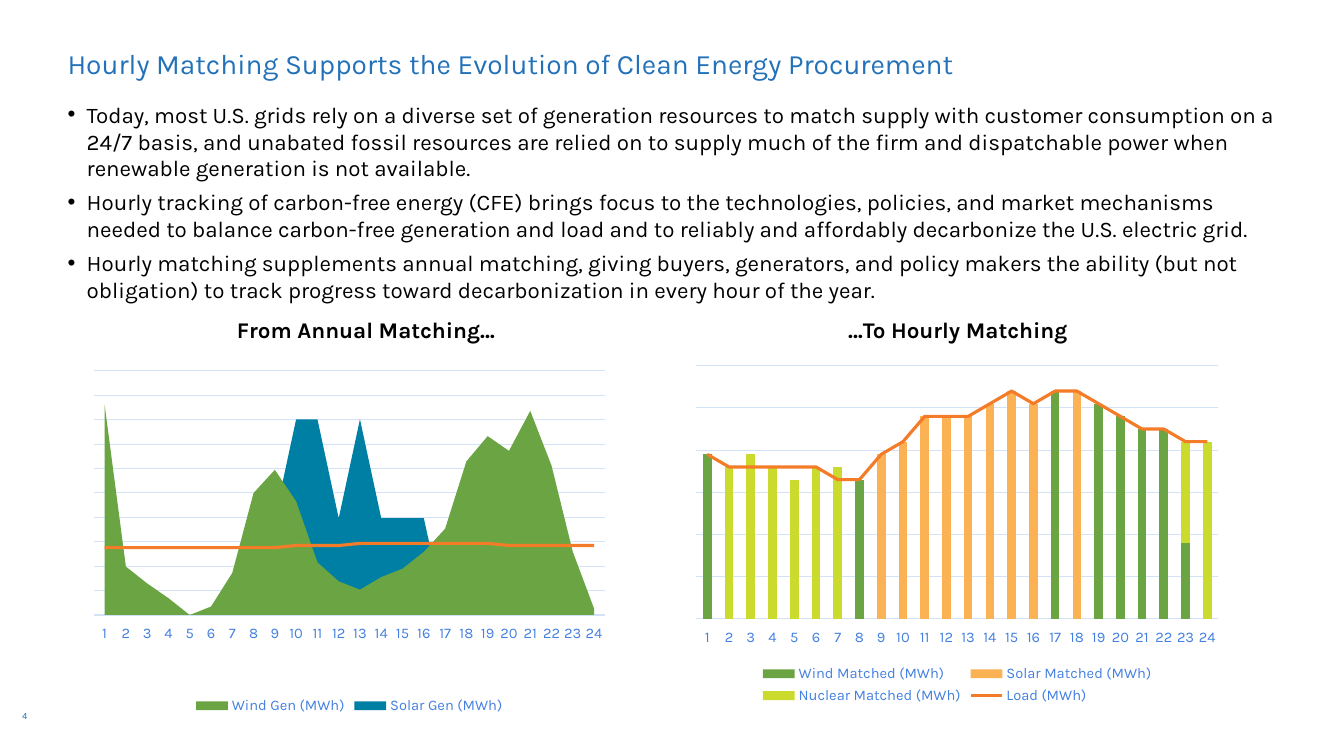
from dataclasses import dataclass

from lxml import etree
from pptx import Presentation
from pptx.chart.chart import Chart
from pptx.chart.data import CategoryChartData
from pptx.dml.color import RGBColor
from pptx.enum.chart import XL_CHART_TYPE, XL_LEGEND_POSITION, XL_MARKER_STYLE, XL_TICK_LABEL_POSITION, XL_TICK_MARK
from pptx.enum.text import MSO_ANCHOR, PP_ALIGN
from pptx.oxml import parse_xml
from pptx.oxml.ns import qn
from pptx.slide import Slide
from pptx.util import Inches, Pt

AREA = XL_CHART_TYPE.AREA
COLUMN_STACKED = XL_CHART_TYPE.COLUMN_STACKED
BOTTOM = XL_LEGEND_POSITION.BOTTOM
NO_MARKER = XL_MARKER_STYLE.NONE
NO_TICK = XL_TICK_MARK.NONE
LABELS_LOW = XL_TICK_LABEL_POSITION.LOW
TOP, MIDDLE = MSO_ANCHOR.TOP, MSO_ANCHOR.MIDDLE
LEFT, CENTER = PP_ALIGN.LEFT, PP_ALIGN.CENTER

FONT = "Karla"
COLORS = {
    "text": "000000", "title": "2372B9", "chart": "184998", "label": "4480E1", "grid": "D4E2F8",
    "wind": "6BA543", "solar_area": "007FA4", "solar_column": "FBB254", "nuclear": "CADB2E", "load": "F47B27",
}
CHART_NAMESPACE = "http://schemas.openxmlformats.org/drawingml/2006/chart"
BULLETS = [
    "Today, most U.S. grids rely on a diverse set of generation resources to match supply with customer consumption on a 24/7 basis, and unabated fossil resources are relied on to supply much of the firm and dispatchable power when renewable generation is not available.",
    "Hourly tracking of carbon-free energy (CFE) brings focus to the technologies, policies, and market mechanisms needed to balance carbon-free generation and load and to reliably and affordably decarbonize the U.S. electric grid.",
    "Hourly matching supplements annual matching, giving buyers, generators, and policy makers the ability (but not obligation) to track progress toward decarbonization in every hour of the year.",
]


@dataclass
class Box:
    left: float
    top: float
    width: float
    height: float


@dataclass
class Series:
    name: str
    color: str
    values: list[int]


@dataclass
class MatchingChart:
    kind: XL_CHART_TYPE
    box: Box
    minimum: float
    maximum: float
    intervals: int
    series: list[Series]


ANNUAL = MatchingChart(AREA, Box(0.77, 3.46, 5.39, 3.67), 0, 116, 10, [
    Series("Wind Gen (MWh)", "wind", [100, 23, 15, 8, 0, 4, 20, 58, 69, 54, 25, 16,
                                      12, 18, 22, 30, 41, 73, 85, 78, 97, 71, 30, 3]),
    Series("Solar Gen (MWh)", "solar_area", [0] * 8 + [46, 93, 93, 46, 93, 46, 46, 46, 0, 46] + [0] * 6),
    Series("Load (MWh)", "load", [32] * 9 + [33] * 3 + [34] * 7 + [33] * 5),
])
HOURLY = MatchingChart(COLUMN_STACKED, Box(6.8, 3.56, 5.39, 3.47), 82, 102, 6, [
    Series("Wind Matched (MWh)", "wind", [95, 67, 45, 23, 0, 13, 58, 93] + [0] * 8
           + [100, 0, 99, 98, 97, 97, 88, 10]),
    Series("Solar Matched (MWh)", "solar_column", [0] * 8 + [95, 96, 98, 98, 98, 99, 100, 99, 0, 100] + [0] * 6),
    Series("Nuclear Matched (MWh)", "nuclear", [0, 27, 50, 71, 93, 81, 36] + [0] * 15 + [8, 86]),
    Series("Load (MWh)", "load", [95, 94, 94, 94, 94, 94, 93, 93, 95, 96, 98, 98,
                                  98, 99, 100, 99, 100, 100, 99, 98, 97, 97, 96, 96]),
])


def rgb(name: str) -> RGBColor:
    return RGBColor.from_string(COLORS[name])


def add_text(slide: Slide, box: Box, paragraphs: list[str], *, size: float, color: str = "text",
             bold: bool = False, align: PP_ALIGN = LEFT, anchor: MSO_ANCHOR = TOP,
             inset: bool = False, bulleted: bool = False, line_spacing: float | None = None) -> None:
    shape = slide.shapes.add_textbox(Inches(box.left), Inches(box.top), Inches(box.width), Inches(box.height))
    frame = shape.text_frame
    frame.word_wrap = True
    frame.vertical_anchor = anchor
    if not inset:
        frame.margin_left = frame.margin_right = frame.margin_top = frame.margin_bottom = 0
    for index, text in enumerate(paragraphs):
        paragraph = frame.add_paragraph() if index else frame.paragraphs[0]
        paragraph.alignment = align
        if line_spacing:
            paragraph.line_spacing = Pt(line_spacing)
        if index:
            paragraph.space_before = Pt(5.1)
        if bulleted:
            properties = paragraph._p.get_or_add_pPr()
            properties.set("marL", str(Inches(0.19)))
            properties.set("indent", str(Inches(-0.19)))
            etree.SubElement(properties, qn("a:buFont")).set("typeface", "Arial")
            etree.SubElement(properties, qn("a:buChar")).set("char", "•")
        run = paragraph.add_run()
        run.text = text
        run.font.name = FONT
        run.font.size = Pt(size)
        run.font.bold = bold
        run.font.color.rgb = rgb(color)


def draw_last_series_as_line(chart: Chart) -> None:
    group = chart.plots[0]._element
    load = group.findall(qn("c:ser"))[-1]
    for element in load.findall(qn("c:invertIfNegative")):
        load.remove(element)
    line_group = parse_xml(
        f'<c:lineChart xmlns:c="{CHART_NAMESPACE}"><c:grouping val="standard"/>'
        '<c:varyColors val="0"/><c:marker val="1"/></c:lineChart>')
    line_group.insert(2, load)
    for axis in group.findall(qn("c:axId")):
        etree.SubElement(line_group, qn("c:axId")).set("val", axis.get("val"))
    group.addnext(line_group)
    line = chart.plots[1].series[0]
    line.smooth = False
    line.marker.style = NO_MARKER


def center_hours_between_ticks(chart: Chart) -> None:
    axis = chart.value_axis._element
    for element in axis.findall(qn("c:crossBetween")):
        axis.remove(element)
    axis.find(qn("c:crosses")).addnext(
        parse_xml(f'<c:crossBetween xmlns:c="{CHART_NAMESPACE}" val="between"/>'))


def hide_legend_entry(chart: Chart, index: int) -> None:
    entry = parse_xml(
        f'<c:legendEntry xmlns:c="{CHART_NAMESPACE}"><c:idx val="{index}"/><c:delete val="1"/></c:legendEntry>')
    chart.legend._element.find(qn("c:legendPos")).addnext(entry)


def place_plot(chart: Chart, left: float, top: float, width: float, height: float) -> None:
    plot_area = chart.plots[0]._element.getparent()
    for element in plot_area.findall(qn("c:layout")):
        plot_area.remove(element)
    settings = {"layoutTarget": "inner", "xMode": "edge", "yMode": "edge",
                "x": left, "y": top, "w": width, "h": height}
    body = "".join(f'<c:{tag} val="{value}"/>' for tag, value in settings.items())
    plot_area.insert(0, parse_xml(
        f'<c:layout xmlns:c="{CHART_NAMESPACE}"><c:manualLayout>{body}</c:manualLayout></c:layout>'))


def add_matching_chart(slide: Slide, matching: MatchingChart) -> Chart:
    data = CategoryChartData()
    data.categories = [str(hour) for hour in range(1, 25)]
    for series in matching.series:
        data.add_series(series.name, series.values)
    box = matching.box
    chart = slide.shapes.add_chart(matching.kind, Inches(box.left), Inches(box.top),
                                   Inches(box.width), Inches(box.height), data).chart
    chart.has_title = False
    chart.has_legend = True
    chart.legend.position = BOTTOM
    chart.legend.include_in_layout = False
    for font, color in ((chart.font, "chart"), (chart.legend.font, "label"),
                        (chart.category_axis.tick_labels.font, "label")):
        font.name, font.size, font.color.rgb = FONT, Pt(10.5), rgb(color)

    hours, energy = chart.category_axis, chart.value_axis
    hours.major_tick_mark = hours.minor_tick_mark = NO_TICK
    hours.tick_label_position = LABELS_LOW
    hours.has_major_gridlines = False
    energy.visible = False
    energy.has_major_gridlines = True
    energy.minimum_scale, energy.maximum_scale = matching.minimum, matching.maximum
    energy.major_unit = (matching.maximum - matching.minimum) / matching.intervals
    center_hours_between_ticks(chart)
    for line in (hours.format.line, energy.major_gridlines.format.line):
        line.color.rgb, line.width = rgb("grid"), Pt(0.75)

    plot = chart.plots[0]
    plot.vary_by_categories = False
    if matching.kind == COLUMN_STACKED:
        plot.gap_width, plot.overlap = 150, 100
    for drawn, series in zip(plot.series, matching.series):
        if series.color == "load":
            drawn.format.line.color.rgb, drawn.format.line.width = rgb("load"), Pt(2.25)
        else:
            drawn.format.fill.solid()
            drawn.format.fill.fore_color.rgb = rgb(series.color)
    draw_last_series_as_line(chart)
    return chart


def main() -> None:
    presentation = Presentation()
    presentation.slide_width, presentation.slide_height = Inches(13.33), Inches(7.5)
    slide = presentation.slides.add_slide(presentation.slide_layouts[6])
    add_text(slide, Box(0.67, 1, 12, 2.21), BULLETS, size=16, bulleted=True)
    add_text(slide, Box(0.67, 0.4, 12, 0.6), ["Hourly Matching Supports the Evolution of Clean Energy Procurement"],
             size=20, color="title", anchor=MIDDLE, line_spacing=13.5)
    annual = add_matching_chart(slide, ANNUAL)
    place_plot(annual, 0.03, 0.06, 0.94, 0.66)
    hide_legend_entry(annual, 2)
    add_matching_chart(slide, HOURLY)
    for left, heading in ((2.22, "From Annual Matching…"), (8.09, "…To Hourly Matching")):
        add_text(slide, Box(left, 3.09, 2.82, 0.37), [heading], size=16, bold=True, align=CENTER, inset=True)
    add_text(slide, Box(0.22, 7.04, 0.42, 0.23), ["4"], size=6.8, color="title")
    presentation.save("out.pptx")


if __name__ == "__main__":
    main()
